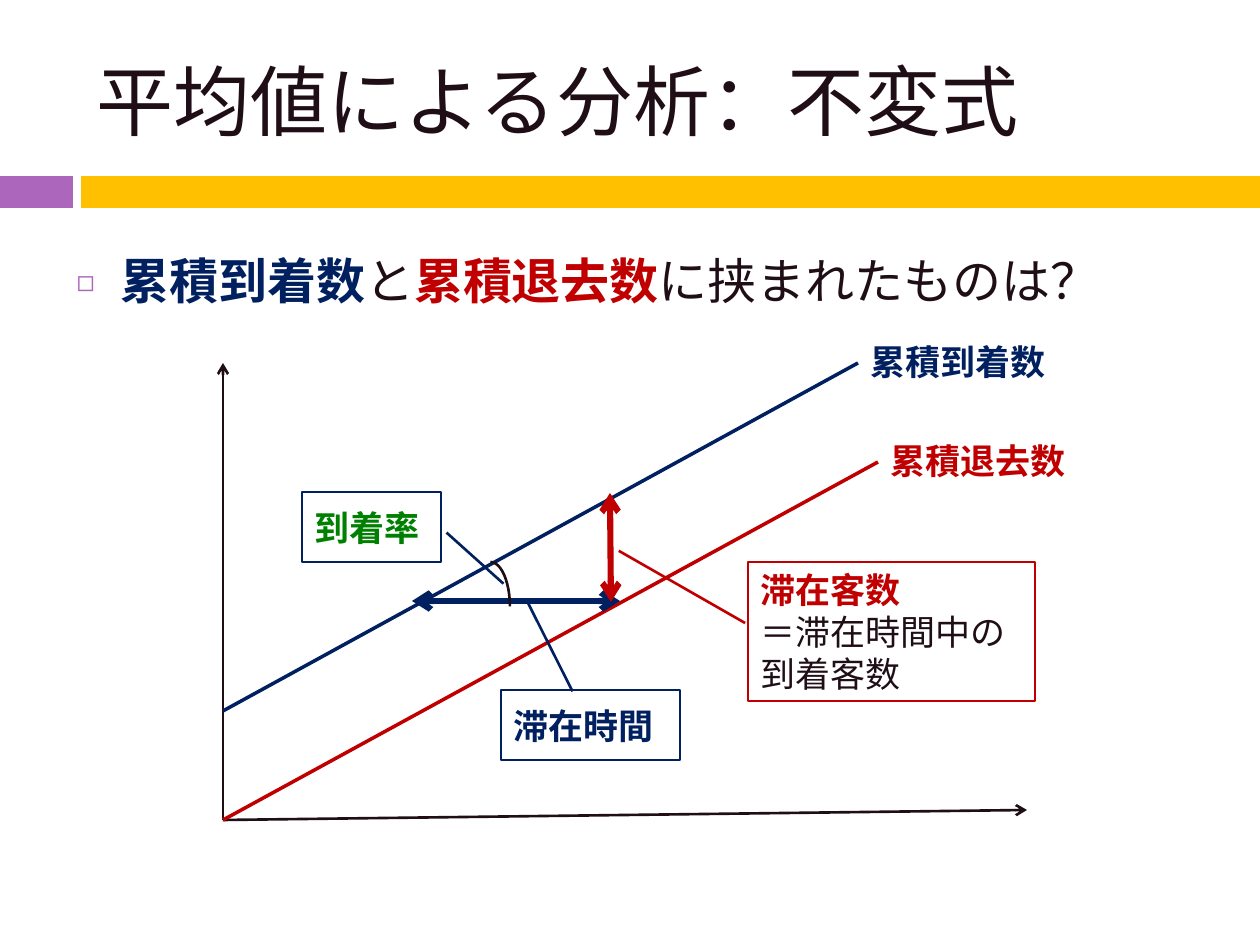
from dataclasses import dataclass

import lxml.etree
import pptx
import pptx.dml.color
import pptx.enum.shapes
import pptx.enum.text
import pptx.oxml.ns
import pptx.util

EMU_PER_PX = 914400 / 126
SHAPES = pptx.enum.shapes.MSO_SHAPE
ANCHOR = pptx.enum.text.MSO_ANCHOR


@dataclass(frozen=True)
class Theme:
    font: str = "Noto Sans CJK JP"
    ink: str = "200E17"
    navy: str = "002060"
    red: str = "C00000"
    green: str = "008000"
    purple: str = "AC66BB"
    amber: str = "FFC000"
    title_size: int = 44
    body_size: int = 28
    label_size: int = 20
    thin: float = 1.5
    medium: float = 2
    thick: float = 3.5


THEME = Theme()


def px(length):
    return pptx.util.Emu(round(length * EMU_PER_PX))


def rgb(color):
    return pptx.dml.color.RGBColor.from_string(color)


def add_xml(parent, tag, **attributes):
    return lxml.etree.SubElement(parent, pptx.oxml.ns.qn(tag), attributes)


def place(shape, box):
    shape.left, shape.top, shape.width, shape.height = map(px, box)


def add_run(paragraph, text, size, color, bold=False):
    run = paragraph.add_run()
    run.text = text
    font = run.font
    font.size = pptx.util.Pt(size)
    font.bold = bold
    font.color.rgb = rgb(color)
    font.name = THEME.font
    add_xml(font._element, "a:ea", typeface=THEME.font)


def set_line(line, color, width):
    line.color.rgb = rgb(color)
    line.width = pptx.util.Pt(width)


def add_title(slide, box):
    title = slide.shapes.title
    place(title, box)
    frame = title.text_frame
    frame.auto_size = pptx.enum.text.MSO_AUTO_SIZE.NONE
    frame.vertical_anchor = ANCHOR.MIDDLE
    paragraph = frame.paragraphs[0]
    paragraph.alignment = pptx.enum.text.PP_ALIGN.LEFT
    add_run(paragraph, "平均値による分析：不変式", THEME.title_size, THEME.ink)


def add_band(slide, box):
    left, top, width, height = box
    block, gap = 73, 8
    parts = [
        (left, block, THEME.purple),
        (left + block + gap, width - block - gap, THEME.amber),
    ]
    for part_left, part_width, color in parts:
        bar = slide.shapes.add_shape(
            SHAPES.RECTANGLE, *map(px, (part_left, top, part_width, height)))
        bar.shadow.inherit = False
        bar.fill.solid()
        bar.fill.fore_color.rgb = rgb(color)
        bar.line.fill.background()


def add_question(slide, box):
    body = slide.placeholders[1]
    place(body, box)
    body.text_frame.auto_size = pptx.enum.text.MSO_AUTO_SIZE.NONE
    paragraph = body.text_frame.paragraphs[0]
    paragraph.space_before = pptx.util.Pt(7)
    properties = paragraph._p.get_or_add_pPr()
    indent = px(44)
    properties.set("marL", str(indent))
    properties.set("indent", str(-indent))
    add_xml(add_xml(properties, "a:buClr"), "a:srgbClr", val=THEME.purple)
    add_xml(properties, "a:buSzPct", val="60000")
    add_xml(properties, "a:buFont", typeface=THEME.font)
    add_xml(properties, "a:buChar", char="◻")
    for text, color, bold in [
        ("累積到着数", THEME.navy, True),
        ("と", THEME.ink, False),
        ("累積退去数", THEME.red, True),
        ("に挟まれたものは？", THEME.ink, False),
    ]:
        add_run(paragraph, text, THEME.body_size, color, bold)


def add_line(slide, start, end, color, width, arrows=()):
    """Draw a straight line; arrows names the ends ("head", "tail") that get an arrow."""
    connector = slide.shapes.add_connector(
        pptx.enum.shapes.MSO_CONNECTOR.STRAIGHT, *map(px, (*start, *end)))
    set_line(connector.line, color, width)
    properties = connector._element.spPr
    for end_name in arrows:
        add_xml(connector.line._get_or_add_ln(), f"a:{end_name}End", type="arrow")
    add_xml(properties, "a:effectLst")


def add_line_label(slide, box, text, color):
    label = slide.shapes.add_textbox(*map(px, box))
    label.text_frame.word_wrap = False
    add_run(label.text_frame.paragraphs[0], text, THEME.label_size, color, True)


def add_callout(slide, box, pointer, border, lines):
    callout = slide.shapes.add_shape(SHAPES.LINE_CALLOUT_1, *map(px, box))
    for index, value in enumerate(pointer):
        callout.adjustments[index] = value
    callout.shadow.inherit = False
    callout.fill.background()
    set_line(callout.line, border, THEME.thin)
    frame = callout.text_frame
    frame.word_wrap = True
    frame.vertical_anchor = ANCHOR.MIDDLE
    for index, (text, color, bold) in enumerate(lines):
        paragraph = frame.add_paragraph() if index else frame.paragraphs[0]
        paragraph.alignment = pptx.enum.text.PP_ALIGN.LEFT
        add_run(paragraph, text, THEME.label_size, color, bold)


def add_diagram(slide, box):
    left, top, width, height = box

    def at(x, y, *size):
        return (left + x, top + y, *size)

    origin = at(0, height)
    arrivals_end, departures_end = (635, 29), (655, 128)
    both = ("head", "tail")
    for start, end, color, weight, arrows in [
        (origin, at(0, 29), THEME.ink, THEME.thin, ("tail",)),
        (origin, at(804, 476), THEME.ink, THEME.thin, ("tail",)),
        (at(0, 377), at(*arrivals_end), THEME.navy, THEME.medium, ()),
        (origin, at(*departures_end), THEME.red, THEME.medium, ()),
        (at(189, 267), at(397, 267), THEME.navy, THEME.thick, both),
        (at(388, 268), at(387, 159), THEME.red, THEME.thick, both),
    ]:
        add_line(slide, start, end, color, weight, arrows)

    angle = slide.shapes.add_shape(SHAPES.ARC, *map(px, at(248, 228, 39, 89)))
    angle.shadow.inherit = False
    angle.fill.background()
    set_line(angle.line, THEME.ink, THEME.thin)

    for (x, y), text, color in [
        (arrivals_end, "累積到着数", THEME.navy),
        (departures_end, "累積退去数", THEME.red),
    ]:
        add_line_label(slide, at(x, y - 29, 202, 55), text, color)

    add_callout(slide, at(525, 228, 287, 139), (0.44, -0.01, -0.08, -0.45), THEME.red,
                [("滞在客数", THEME.red, True),
                 ("＝滞在時間中の到着客数", THEME.ink, False)])
    add_callout(slide, at(278, 356, 179, 70), (0.02, 0.4, -1.25, 0.15), THEME.navy,
                [("滞在時間", THEME.navy, True)])
    add_callout(slide, at(79, 158, 139, 70), (0.58, 1.04, 1.31, 1.45), THEME.navy,
                [("到着率", THEME.green, True)])


def main():
    presentation = pptx.Presentation()
    presentation.slide_width, presentation.slide_height = px(1260), px(945)
    slide = presentation.slides.add_slide(presentation.slide_layouts[1])
    add_band(slide, (0, 176, 1260, 32))
    add_title(slide, (84, 32, 1124, 136))
    add_question(slide, (64, 244, 1160, 655))
    add_diagram(slide, (223, 334, 842, 486))
    presentation.save("out.pptx")


if __name__ == "__main__":
    main()
